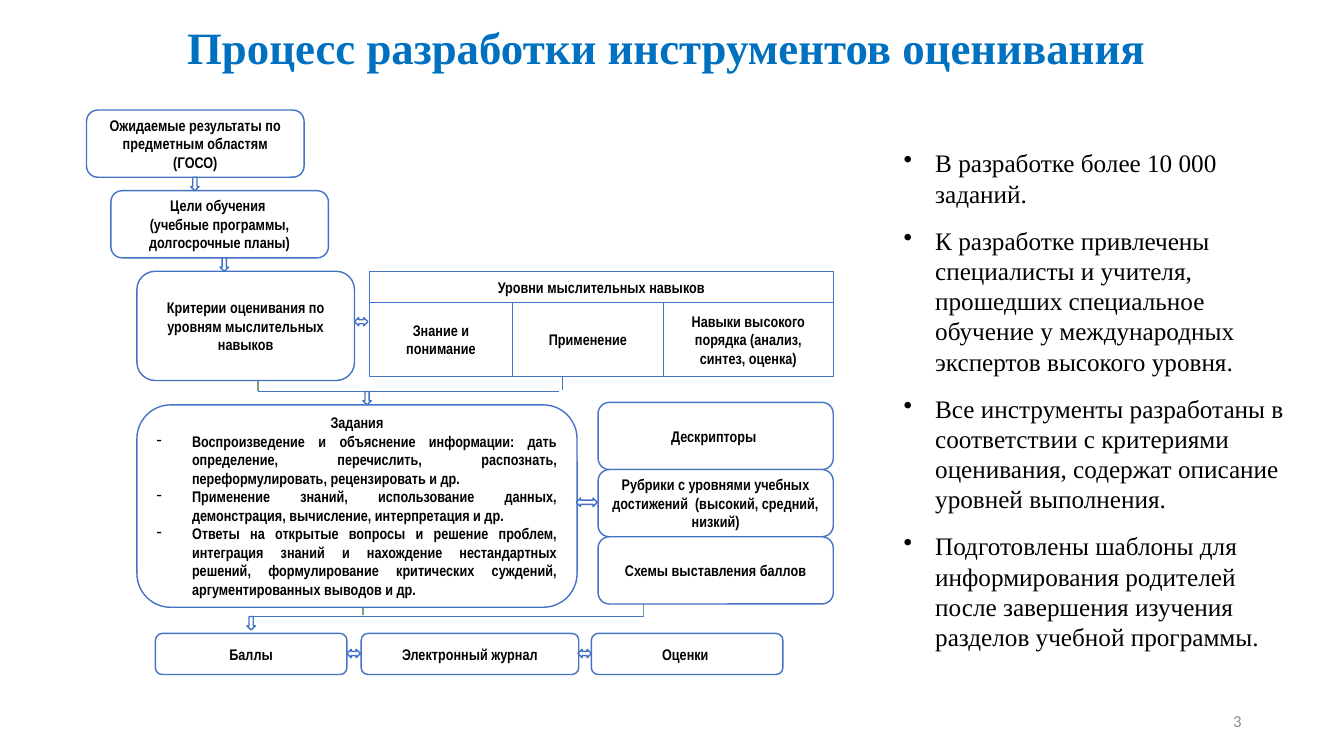
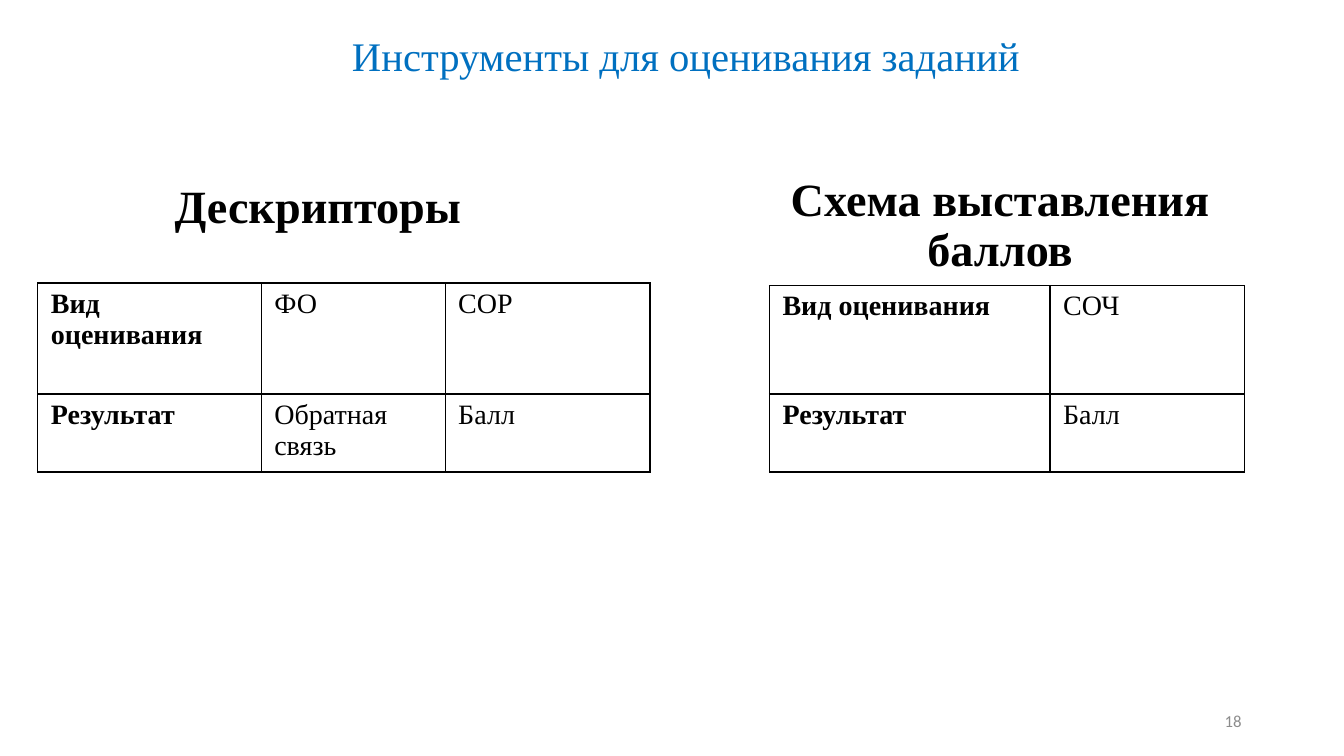
from itertools import accumulate

from lxml.etree import SubElement
from pptx import Presentation
from pptx.dml.color import RGBColor
from pptx.enum.shapes import MSO_CONNECTOR, MSO_SHAPE as SHAPE
from pptx.enum.text import MSO_ANCHOR as ANCHOR, MSO_AUTO_SIZE, PP_ALIGN as ALIGN
from pptx.oxml import parse_xml
from pptx.oxml.ns import nsdecls, qn
from pptx.util import Inches, Pt

# Shared style
COLORS = {
    "title": "0070C0",
    "text": "000000",
    "outline": "4472C4",
    "branch": "72A376",
    "number": "8C8C8C",
    "paper": "FFFFFF",
}
RGB = {name: RGBColor.from_string(value) for name, value in COLORS.items()}
SERIF, NARROW, SANS = "Times New Roman", "Arial Narrow", "Calibri"

# The page is a grid of 160 columns by 90 rows
deck = Presentation()
deck.slide_width, deck.slide_height = Inches(13.33), Inches(7.5)
COLUMN, ROW = deck.slide_width / 160, deck.slide_height / 90


def grid(left, top, width, height):
    """Turn columns and rows into slide lengths."""
    return (round(left * COLUMN), round(top * ROW),
            round(width * COLUMN), round(height * ROW))


def write(frame, texts, size, font=SERIF, color="text", bold=False,
          align=ALIGN.LEFT, anchor=ANCHOR.MIDDLE, spacing=1.0):
    """Fill a text frame, one paragraph for each text."""
    frame.word_wrap = True
    frame.auto_size = MSO_AUTO_SIZE.NONE
    frame.vertical_anchor = anchor
    for index, text in enumerate(texts):
        para = frame.add_paragraph() if index else frame.paragraphs[0]
        para.alignment = align
        para.line_spacing = spacing
        span = para.add_run()
        span.text = text
        span.font.name, span.font.size, span.font.bold = font, Pt(size), bold
        span.font.color.rgb = RGB[color]
    return frame.paragraphs


# Titles and page numbers
pages = []
for title, area, size, bold, spacing, number in [
    ("Процесс разработки инструментов оценивания ", (20, 1.7, 120, 7.7), 32, True, 1.0, "3"),
    ("Инструменты для оценивания заданий ", (10.3, 1.8, 144, 10.4), 29, False, 0.9, "18"),
]:
    page = deck.slides.add_slide(deck.slide_layouts[5])
    heading = page.shapes.title
    heading.left, heading.top, heading.width, heading.height = grid(*area)
    write(heading.text_frame, [title], size, color="title", bold=bold,
          align=ALIGN.CENTER, spacing=spacing)
    box = page.shapes.add_textbox(*grid(113, 83.4, 36, 4.8))
    write(box.text_frame, [number], 12, SANS, "number", align=ALIGN.RIGHT)
    pages.append(page)
process, tools = pages

# Process: branching lines
for left, top, right, bottom, color, weight in [
    (43.2, 71.5, 43.2, 73.2, "branch", 1),
    (76.6, 71.5, 76.6, 73.4, "branch", 1),
    (30.7, 45.2, 30.7, 46.6, "branch", 1),
    (67, 44.8, 67, 46.4, "outline", 0.5),
    (30.7, 46.6, 66.6, 46.6, "outline", 0.5),
    (29.8, 73.4, 76.6, 73.4, "outline", 0.5),
]:
    line = process.shapes.add_connector(MSO_CONNECTOR.STRAIGHT, *grid(left, top, right, bottom))
    line.line.color.rgb = RGB[color]
    line.line.width = Pt(weight)
    SubElement(line._element.spPr, qn("a:effectLst"))

# Process: boxes and arrows, as (preset, area, texts)
task_texts = [
    "Задания",
    "Воспроизведение и объяснение информации: дать определение, перечислить, "
    "распознать, переформулировать, рецензировать и др.",
    "Применение знаний, использование данных, демонстрация, вычисление, "
    "интерпретация и др.",
    "Ответы на открытые вопросы и решение проблем, интеграция знаний и "
    "нахождение нестандартных решений, формулирование критических суждений, "
    "аргументированных выводов и др. ",
]
figures = [
    (SHAPE.ROUNDED_RECTANGLE, (10.3, 13.1, 25.9, 8),
     ["Ожидаемые результаты по предметным областям (ГОСО)"]),
    (SHAPE.ROUNDED_RECTANGLE, (13.2, 22.7, 25.9, 8),
     ["Цели обучения ", "(учебные программы, долгосрочные планы)"]),
    (SHAPE.ROUNDED_RECTANGLE, (16.3, 32.3, 25.9, 13),
     ["Критерии оценивания по уровням мыслительных навыков"]),
    (SHAPE.ROUNDED_RECTANGLE, (16.3, 48.2, 52.4, 24.1), task_texts),
    (SHAPE.RECTANGLE, (44, 32.3, 55.2, 3.7), ["Уровни мыслительных навыков"]),
]
for index, text in enumerate([
    "Дескрипторы ",
    "Рубрики с уровнями учебных достижений  (высокий, средний, низкий)",
    "Схемы выставления баллов",
]):
    figures.append((SHAPE.ROUNDED_RECTANGLE, (71.2, 47.9 + 8 * index, 28, 8), [text]))
for left, width, text in [
    (18.5, 22.8, "Баллы"), (43, 25.9, "Электронный журнал"), (70.4, 22.8, "Оценки "),
]:
    figures.append((SHAPE.ROUNDED_RECTANGLE, (left, 75.4, width, 4.9), [text]))
level_widths = [17, 18, 20.2]
for left, width, text in zip(accumulate(level_widths, initial=44), level_widths, [
    "Знание и понимание", "Применение", "Навыки высокого порядка (анализ, синтез, оценка)",
]):
    figures.append((SHAPE.RECTANGLE, (left, 36, width, 8.8), [text]))
for left, top in [(22.7, 21.1), (26.2, 30.7), (43.2, 46.6), (29.4, 73.4)]:
    figures.append((SHAPE.DOWN_ARROW, (left, top, 1, 1.6), []))
for left, top, width in [(42.2, 37.8, 1.6), (68.6, 59.3, 2.5), (41.3, 77.3, 1.6), (68.8, 77.3, 1.6)]:
    figures.append((SHAPE.LEFT_RIGHT_ARROW, (left, top, width, 1), []))

for preset, area, texts in figures:
    figure = process.shapes.add_shape(preset, *grid(*area))
    figure.shadow.inherit = False
    figure.fill.solid()
    figure.fill.fore_color.rgb = RGB["paper"]
    figure.line.color.rgb = RGB["outline"]
    figure.line.width = Pt(1)
    paras = write(figure.text_frame, texts, 11, NARROW, bold=True, align=ALIGN.CENTER)
    if texts is task_texts:
        task_paras = paras[1:]

# Process: remarks on the right, then both bulleted lists
remarks = process.shapes.add_textbox(*grid(106.4, 17, 49.1, 61.8))
remark_paras = write(remarks.text_frame, [
    "В разработке более 10 000 заданий.",
    "К разработке привлечены специалисты и учителя, прошедших специальное "
    "обучение у международных экспертов высокого уровня.",
    "Все инструменты разработаны в соответствии с критериями оценивания, "
    "содержат описание уровней выполнения.",
    "Подготовлены шаблоны для информирования родителей после завершения "
    "изучения разделов учебной программы.",
], 18, anchor=ANCHOR.TOP)
for paras, mark, indent, after, align in [
    (task_paras, "-", 4.2, 0, ALIGN.JUSTIFY),
    (remark_paras, "•", 3.75, 12, ALIGN.LEFT),
]:
    for para in paras:
        para.alignment = align
        para.space_after = Pt(after)
        properties = para._p.get_or_add_pPr()
        properties.set("marL", str(round(indent * COLUMN)))
        properties.set("indent", str(-round(indent * COLUMN)))
        SubElement(properties, qn("a:buChar")).set("char", mark)

# Tools: headings
for area, text in [
    ((0, 19.7, 75.7, 10.3), "Дескрипторы"),
    ((83.8, 21.8, 70.5, 10.3), "Схема выставления баллов"),
]:
    box = tools.shapes.add_textbox(*grid(*area))
    write(box.text_frame, [text], 33, bold=True, align=ALIGN.CENTER, spacing=0.9)

# Tools: tables with thin black borders
for left, top, widths, heights, rows in [
    (4.5, 33.7, [26.6, 21.9, 24.4], [13.2, 9.3],
     [["Вид оценивания", "ФО", "СОР"], ["Результат", "Обратная связь", "Балл"]]),
    (91.6, 34, [33.4, 23.2], [12.9, 9.3],
     [["Вид оценивания", "СОЧ"], ["Результат", "Балл"]]),
]:
    table = tools.shapes.add_table(
        len(rows), len(widths), *grid(left, top, sum(widths), sum(heights))).table
    table.first_row = table.horz_banding = False
    for column, width in zip(table.columns, widths):
        column.width = round(width * COLUMN)
    for row, height, texts in zip(table.rows, heights, rows):
        row.height = round(height * ROW)
        for index, (cell, text) in enumerate(zip(row.cells, texts)):
            cell.margin_left = cell.margin_right = Inches(0.13)
            cell.fill.background()
            write(cell.text_frame, [text], 20, bold=index == 0, anchor=None)
            cell.vertical_anchor = ANCHOR.TOP
            # Wrapping and fitting belong to shapes, not to cells
            body = cell.text_frame._txBody.bodyPr
            body.attrib.clear()
            for child in list(body):
                body.remove(child)
            for place, side in enumerate("LRTB"):
                cell._tc.get_or_add_tcPr().insert(place, parse_xml(
                    f'<a:ln{side} {nsdecls("a")} w="{Pt(1)}"><a:solidFill>'
                    f'<a:srgbClr val="{COLORS["text"]}"/></a:solidFill></a:ln{side}>'))

deck.save("out.pptx")
